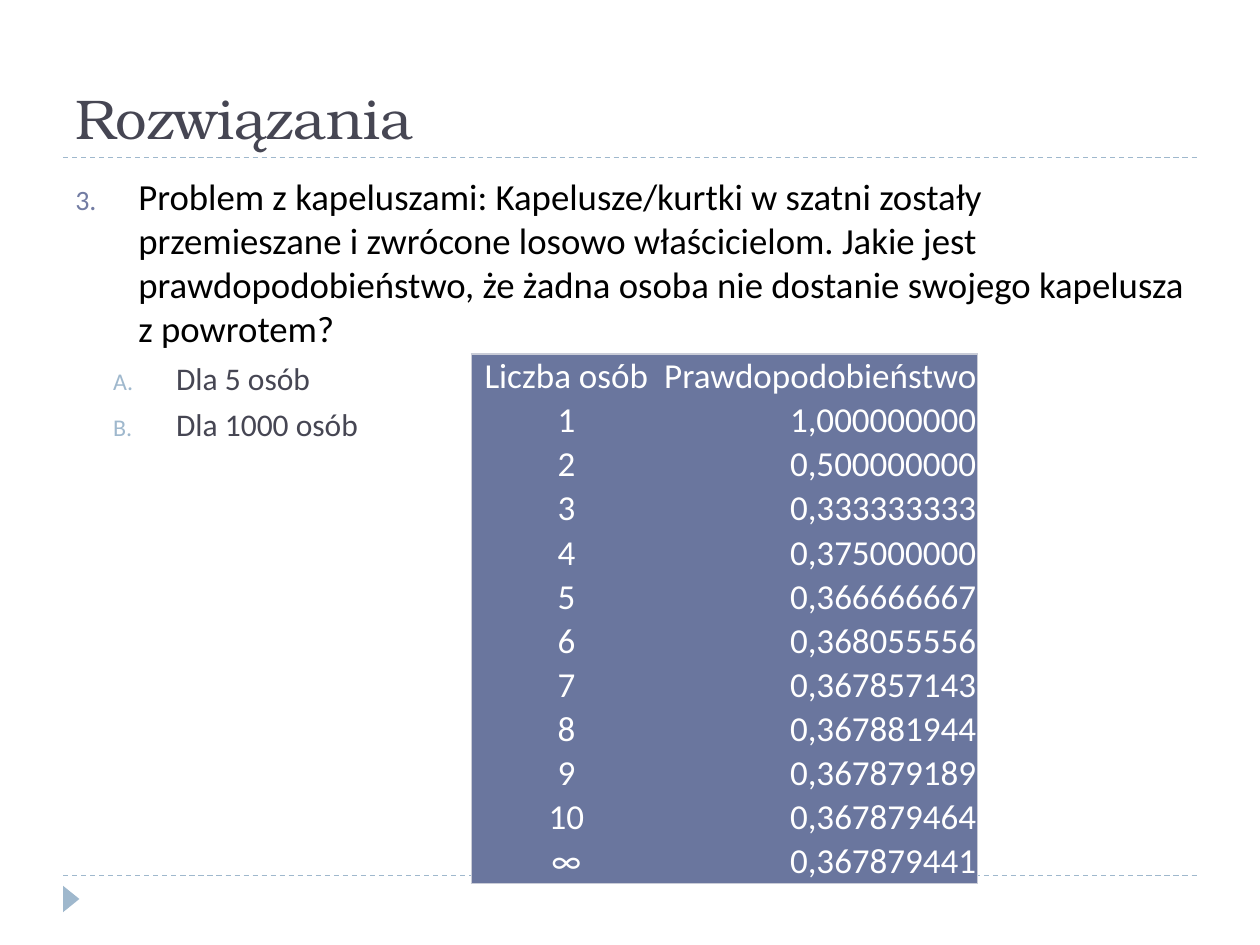
from lxml.etree import SubElement
from pptx import Presentation
from pptx.dml.color import RGBColor
from pptx.enum.dml import MSO_LINE
from pptx.enum.shapes import MSO_CONNECTOR, MSO_SHAPE
from pptx.enum.text import MSO_ANCHOR, PP_ALIGN
from pptx.oxml.ns import qn
from pptx.util import Inches, Pt

HEADING_FONT, BODY_FONT = "TeX Gyre Bonum", "Calibri"
DARK, ACCENT, LIGHT = "464653", "727CA3", "9FB8CD"
TABLE_FILL, TABLE_BORDER = "6A769E", "C9CCD7"

QUESTION = (
    "Problem z kapeluszami: Kapelusze/kurtki w szatni zostały przemieszane "
    "i zwrócone losowo właścicielom. Jakie jest prawdopodobieństwo, że żadna "
    "osoba nie dostanie swojego kapelusza z powrotem?"
)
CASES = ["Dla 5 osób", "Dla 1000 osób"]
ROWS = [
    ("Liczba osób", "Prawdopodobieństwo"),
    ("1", "1,000000000"),
    ("2", "0,500000000"),
    ("3", "0,333333333"),
    ("4", "0,375000000"),
    ("5", "0,366666667"),
    ("6", "0,368055556"),
    ("7", "0,367857143"),
    ("8", "0,367881944"),
    ("9", "0,367879189"),
    ("10", "0,367879464"),
    ("∞", "0,367879441"),
]


def color(value):
    """Return the colour for a hex string."""
    return RGBColor.from_string(value)


def add_run(paragraph, text, size, font_name, font_color):
    """Append a formatted run to a paragraph."""
    run = paragraph.add_run()
    run.text = text
    run.font.size = Pt(size)
    run.font.name = font_name
    run.font.color.rgb = color(font_color)


def add_rule(slide, top):
    """Draw a dashed rule across the slide."""
    rule = slide.shapes.add_connector(
        MSO_CONNECTOR.STRAIGHT, Inches(0.5), Inches(top), Inches(9.5), Inches(top)
    )
    rule.line.color.rgb = color(LIGHT)
    rule.line.width = Pt(0.75)
    rule.line.dash_style = MSO_LINE.DASH
    SubElement(rule._element.spPr, qn("a:effectLst"))


def add_marker(slide):
    """Draw the small triangle in the footer."""
    marker = slide.shapes.add_shape(
        MSO_SHAPE.ISOSCELES_TRIANGLE,
        Inches(0.46), Inches(7.07), Inches(0.21), Inches(0.13),
    )
    marker.rotation = 90
    marker.shadow.inherit = False
    marker.fill.solid()
    marker.fill.fore_color.rgb = color(LIGHT)
    marker.line.fill.background()


def set_title(slide, text):
    """Place and fill the title placeholder."""
    title = slide.shapes.title
    title.left, title.top = Inches(0.5), Inches(0.17)
    title.width, title.height = Inches(9), Inches(1.08)
    frame = title.text_frame
    frame.vertical_anchor = MSO_ANCHOR.BOTTOM
    paragraph = frame.paragraphs[0]
    paragraph.alignment = PP_ALIGN.LEFT
    add_run(paragraph, text, 32, HEADING_FONT, DARK)


def number_paragraph(paragraph, scheme, start, indent, bullet_color):
    """Give a paragraph automatic numbering with a hanging indent."""
    properties = paragraph._p.get_or_add_pPr()
    properties.set("marL", str(Inches(indent)))
    properties.set("indent", str(Inches(-0.5)))
    bullet = SubElement(properties, qn("a:buClr"))
    SubElement(bullet, qn("a:srgbClr"), val=bullet_color)
    SubElement(properties, qn("a:buSzPct"), val="76000")
    SubElement(properties, qn("a:buFont"), typeface=BODY_FONT)
    SubElement(properties, qn("a:buAutoNum"), type=scheme, startAt=str(start))


def add_problem(slide):
    """Add the numbered question with its lettered cases."""
    box = slide.shapes.add_textbox(Inches(0.5), Inches(1.33), Inches(9), Inches(5.4))
    frame = box.text_frame
    frame.word_wrap = True
    question = frame.paragraphs[0]
    number_paragraph(question, "arabicPeriod", 3, 0.5, ACCENT)
    add_run(question, QUESTION, 21, BODY_FONT, "000000")
    for text in CASES:
        case = frame.add_paragraph()
        case.level = 1
        case.space_before = Pt(5)
        number_paragraph(case, "alphaUcPeriod", 1, 0.8, LIGHT)
        add_run(case, text, 18, BODY_FONT, DARK)


def set_borders(cell, outer_sides):
    """Draw the outer sides of a cell and clear the others."""
    properties = cell._tc.get_or_add_tcPr()
    for side in "LRTB":
        line = SubElement(properties, qn(f"a:ln{side}"), w=str(Pt(0.75)))
        if side in outer_sides:
            fill = SubElement(line, qn("a:solidFill"))
            SubElement(fill, qn("a:srgbClr"), val=TABLE_BORDER)
        else:
            SubElement(line, qn("a:noFill"))


def fill_cell(cell, text, alignment, outer_sides):
    """Format one table cell and write its text."""
    set_borders(cell, outer_sides)
    cell.fill.solid()
    cell.fill.fore_color.rgb = color(TABLE_FILL)
    cell.vertical_anchor = MSO_ANCHOR.BOTTOM
    cell.margin_left = cell.margin_right = cell.margin_top = Inches(0.01)
    cell.margin_bottom = 0
    paragraph = cell.text_frame.paragraphs[0]
    paragraph.alignment = alignment
    add_run(paragraph, text, 20, BODY_FONT, "FFFFFF")


def add_probability_table(slide):
    """Add the table of probabilities by number of people."""
    row_height = Inches(0.35)
    table = slide.shapes.add_table(
        len(ROWS), 2, Inches(3.74), Inches(2.81), Inches(4.02), row_height * len(ROWS)
    ).table
    table.first_row = table.horz_banding = False
    table.columns[0].width, table.columns[1].width = Inches(1.51), Inches(2.51)
    last = len(ROWS) - 1
    for index, (people, probability) in enumerate(ROWS):
        table.rows[index].height = row_height
        edges = {0: "T", last: "B"}.get(index, "")
        fill_cell(table.cell(index, 0), people, PP_ALIGN.CENTER, "L" + edges)
        fill_cell(table.cell(index, 1), probability, PP_ALIGN.RIGHT, "R" + edges)


def main():
    """Build and save the presentation."""
    presentation = Presentation()
    presentation.slide_width, presentation.slide_height = Inches(10), Inches(7.5)
    slide = presentation.slides.add_slide(presentation.slide_layouts[5])
    for top in (6.95, 1.25):
        add_rule(slide, top)
    add_marker(slide)
    set_title(slide, "Rozwiązania")
    add_problem(slide)
    add_probability_table(slide)
    presentation.save("out.pptx")


if __name__ == "__main__":
    main()
